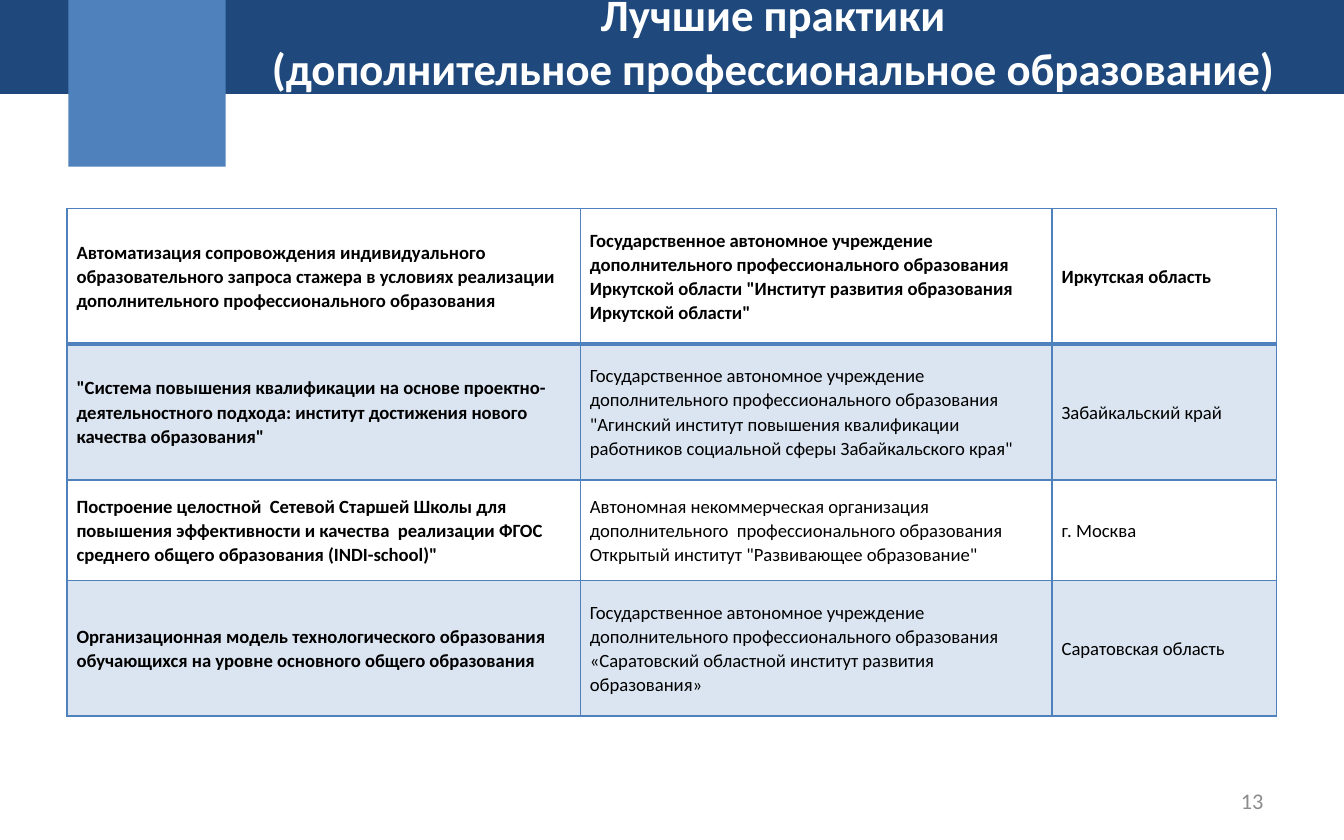
"""Build the slide listing best practices in further professional education."""
from typing import NamedTuple

from lxml.etree import SubElement
from pptx import Presentation
from pptx.dml.color import RGBColor
from pptx.enum.text import MSO_ANCHOR, MSO_AUTO_SIZE, PP_ALIGN
from pptx.oxml import parse_xml
from pptx.oxml.ns import nsdecls, qn
from pptx.util import Inches, Pt

NAVY = RGBColor(0x1F, 0x49, 0x7D)
BLUE = RGBColor(0x4F, 0x81, 0xBD)
WHITE = RGBColor(0xFF, 0xFF, 0xFF)
BLACK = RGBColor(0, 0, 0)
GRAY = RGBColor(0x8C, 0x8C, 0x8C)
FONT = "Calibri"
COLUMN_WIDTHS = (3.82, 3.51, 1.67)


class Box(NamedTuple):
    left: float
    top: float
    width: float
    height: float

    def lengths(self) -> list:
        return [Inches(value) for value in self]


class Practice(NamedTuple):
    title: str
    institution: str
    region: str


class TextStyle(NamedTuple):
    size: float
    color: RGBColor
    bold: bool = False


TITLE = "Лучшие практики \n(дополнительное профессиональное образование) "
PRACTICES = (
    Practice(
        "Автоматизация сопровождения индивидуального образовательного запроса стажера "
        "в условиях реализации дополнительного профессионального образования",
        "Государственное автономное учреждение дополнительного профессионального образования "
        'Иркутской области "Институт развития образования Иркутской области"',
        "Иркутская область",
    ),
    Practice(
        '"Система повышения квалификации на основе проектно-деятельностного подхода: '
        'институт достижения нового качества образования"',
        "Государственное автономное учреждение дополнительного профессионального образования "
        '"Агинский институт повышения квалификации работников социальной сферы Забайкальского края"',
        "Забайкальский край",
    ),
    Practice(
        "Построение целостной  Сетевой Старшей Школы для повышения эффективности и качества  "
        'реализации ФГОС среднего общего образования (INDI-school)"',
        "Автономная некоммерческая организация дополнительного  профессионального образования "
        'Открытый институт "Развивающее образование"',
        "г. Москва",
    ),
    Practice(
        "Организационная модель технологического образования обучающихся "
        "на уровне основного общего образования",
        "Государственное автономное учреждение дополнительного профессионального образования "
        "«Саратовский областной институт развития образования»",
        "Саратовская область",
    ),
)
ROW_HEIGHTS = (1.01, 1.01, 0.75, 1.01)


def style_runs(paragraph, style: TextStyle) -> None:
    for run in paragraph.runs:
        run.font.name = FONT
        run.font.size = Pt(style.size)
        run.font.bold = style.bold
        run.font.color.rgb = style.color


def add_block(slide, box: Box, color: RGBColor) -> None:
    shape = slide.shapes.add_shape(1, *box.lengths())
    shape.shadow.inherit = False
    shape.fill.solid()
    shape.fill.fore_color.rgb = color
    shape.line.fill.background()


def add_text(slide, box: Box, text: str, style: TextStyle, alignment: PP_ALIGN):
    text_frame = slide.shapes.add_textbox(*box.lengths()).text_frame
    text_frame.word_wrap = True
    text_frame.text = text
    for paragraph in text_frame.paragraphs:
        paragraph.alignment = alignment
        style_runs(paragraph, style)
    return text_frame


def set_borders(cell, bottom_width: float) -> None:
    properties = cell._tc.get_or_add_tcPr()
    widths = {"lnL": 1, "lnR": 1, "lnT": 1, "lnB": bottom_width}
    for index, (side, width) in enumerate(widths.items()):
        properties.insert(index, parse_xml(
            f'<a:{side} {nsdecls("a")} w="{Pt(width)}"><a:solidFill>'
            f'<a:srgbClr val="{BLUE}"/></a:solidFill></a:{side}>'
        ))


def fill_cell(cell, banded: bool) -> None:
    if not banded:
        cell.fill.background()
        return
    cell.fill.solid()
    cell.fill.fore_color.rgb = BLUE
    color = cell._tc.tcPr.find(qn("a:solidFill")).find(qn("a:srgbClr"))
    SubElement(color, qn("a:alpha")).set("val", "20000")


def format_cell(cell, text: str, bold: bool, banded: bool, bottom_width: float) -> None:
    cell.text_frame.text = text
    cell.vertical_anchor = MSO_ANCHOR.MIDDLE
    cell.margin_left = cell.margin_right = Inches(0.07)
    cell.margin_top = cell.margin_bottom = 0
    paragraph = cell.text_frame.paragraphs[0]
    paragraph.line_spacing = 1.07
    style_runs(paragraph, TextStyle(10, BLACK, bold))
    fill_cell(cell, banded)
    set_borders(cell, bottom_width)


def add_practices(slide, box: Box) -> None:
    table = slide.shapes.add_table(len(PRACTICES), len(COLUMN_WIDTHS), *box.lengths()).table
    for column, width in zip(table.columns, COLUMN_WIDTHS):
        column.width = Inches(width)
    for row_index, (practice, height) in enumerate(zip(PRACTICES, ROW_HEIGHTS)):
        table.rows[row_index].height = Inches(height)
        for column_index, text in enumerate(practice):
            format_cell(
                table.cell(row_index, column_index),
                text,
                bold=row_index == 0 or column_index == 0,
                banded=row_index % 2 == 1,
                bottom_width=2 if row_index == 0 else 1,
            )


def main() -> None:
    presentation = Presentation()
    presentation.slide_width = Inches(10)
    presentation.slide_height = Inches(6.25)
    slide = presentation.slides.add_slide(presentation.slide_layouts[6])
    add_block(slide, Box(0, 0, 10, 0.7), NAVY)
    add_block(slide, Box(0.51, 0, 1.17, 1.24), BLUE)
    number = add_text(slide, Box(7.17, 5.79, 2.33, 0.33), "13", TextStyle(12, GRAY), PP_ALIGN.RIGHT)
    number.vertical_anchor = MSO_ANCHOR.MIDDLE
    title = add_text(
        slide, Box(1.3, -0.15, 8.98, 0.91), TITLE, TextStyle(24, WHITE, True), PP_ALIGN.CENTER
    )
    title.auto_size = MSO_AUTO_SIZE.SHAPE_TO_FIT_TEXT
    add_practices(slide, Box(0.5, 1.55, sum(COLUMN_WIDTHS), sum(ROW_HEIGHTS)))
    presentation.save("out.pptx")


if __name__ == "__main__":
    main()
